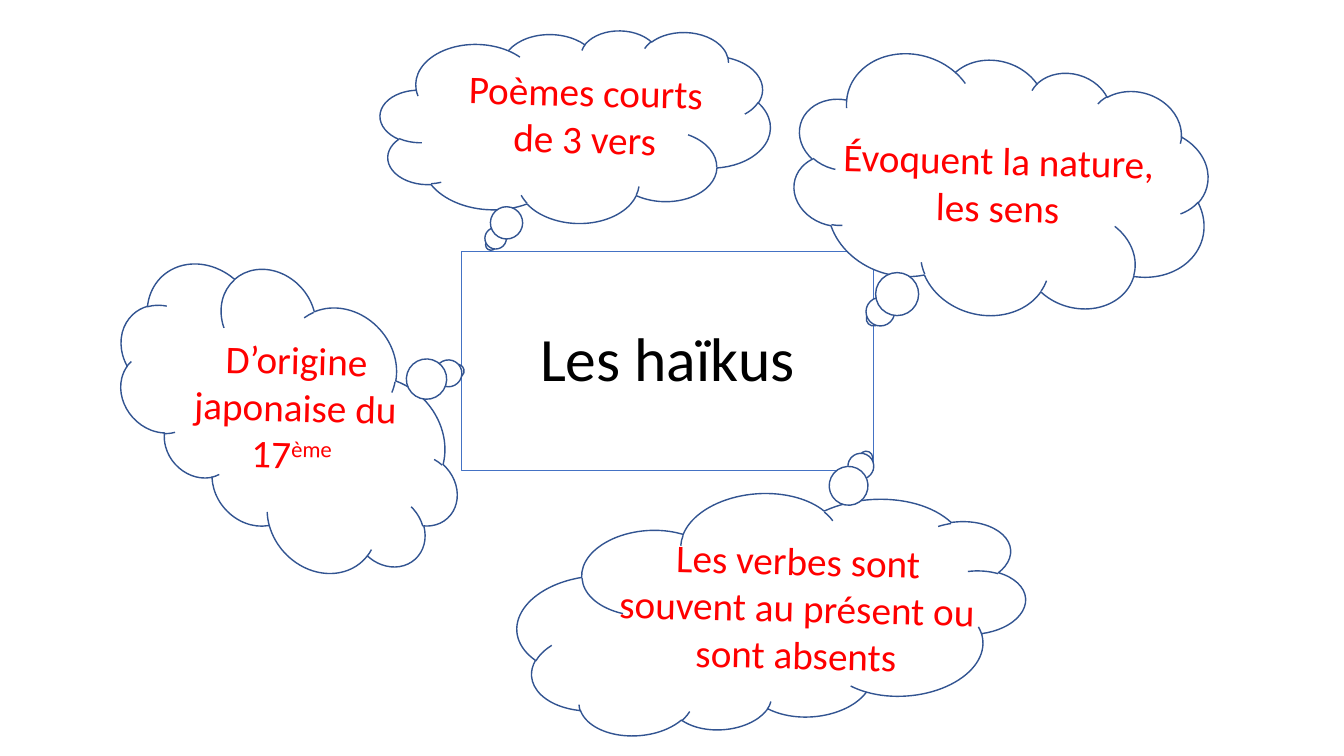
import pptx
import pptx.util
import pptx.dml.color
import pptx.enum.shapes
import pptx.enum.text

Inches, Pt = pptx.util.Inches, pptx.util.Pt
SHAPE = pptx.enum.shapes.MSO_SHAPE
FONT = "Calibri"
TEXT_TILT = 1.4
COLORS = {
    "cloud": "FFFFFF",
    "cloud_line": "325491",
    "title_line": "4472C4",
    "title": "000000",
    "idea": "FF0000",
}

# Cloud box, cloud rotation, text box, paragraphs made of (text, superscript) runs
IDEAS = [
    ((1.02, 2.91, 3.76, 2.4), 227.7, (1.6, 3.28, 2.66, 1.51),
     [[("D’origine japonaise du 17", False), ("ème ", True)]]),
    ((7.85, 0.57, 4.14, 2.56), 15.4, (8.02, 1.3, 3.75, 1.51),
     [[("Évoquent la nature, les sens", False)]]),
    ((3.77, 0.29, 3.87, 1.92), 1.4, (4.18, 0.62, 3.25, 1.04),
     [[("Poèmes courts", False)], [("de 3 vers", False)]]),
    ((5.12, 4.9, 5.05, 2.31), 175.9, (6.01, 5.27, 3.79, 1.52),
     [[("Les verbes sont souvent au présent ou sont absents", False)]]),
]


def rgb(name):
    return pptx.dml.color.RGBColor.from_string(COLORS[name])


def add_outlined(s, kind, box, line, width):
    sp = s.shapes.add_shape(kind, *map(Inches, box))
    sp.shadow.inherit = False
    sp.line.color.rgb = rgb(line)
    sp.line.width = Pt(width)
    return sp


def add_run(p, text, size, color, superscript=False):
    r = p.add_run()
    r.text = text
    r.font.name = FONT
    r.font.size = Pt(size)
    r.font.color.rgb = rgb(color)
    if superscript:
        r.font._element.set("baseline", "30000")


def add_title(s, box):
    sp = add_outlined(s, SHAPE.RECTANGLE, box, "title_line", 0.75)
    sp.fill.background()
    tf = sp.text_frame
    tf.vertical_anchor = pptx.enum.text.MSO_ANCHOR.MIDDLE
    p = tf.paragraphs[0]
    p.alignment = pptx.enum.text.PP_ALIGN.CENTER
    p.line_spacing = 0.9
    add_run(p, "Les haïkus", 44, "title")


def add_idea(s, cloud_box, rotation, text_box, paragraphs):
    """Thought cloud with a slightly tilted text over it."""
    cloud = add_outlined(s, SHAPE.CLOUD_CALLOUT, cloud_box, "cloud_line", 1)
    cloud.rotation = rotation
    cloud.fill.solid()
    cloud.fill.fore_color.rgb = rgb("cloud")

    tb = s.shapes.add_textbox(*map(Inches, text_box))
    tb.rotation = TEXT_TILT
    tf = tb.text_frame
    tf.word_wrap = True
    for i, runs in enumerate(paragraphs):
        p = tf.add_paragraph() if i else tf.paragraphs[0]
        p.alignment = pptx.enum.text.PP_ALIGN.CENTER
        for text, superscript in runs:
            add_run(p, text, 28, "idea", superscript)


def main():
    prs = pptx.Presentation()
    prs.slide_width, prs.slide_height = Inches(13.33), Inches(7.5)
    s = prs.slides.add_slide(prs.slide_layouts[6])
    add_title(s, (4.58, 2.5, 4.08, 2.17))
    for idea in IDEAS:
        add_idea(s, *idea)
    prs.save("out.pptx")


if __name__ == "__main__":
    main()
